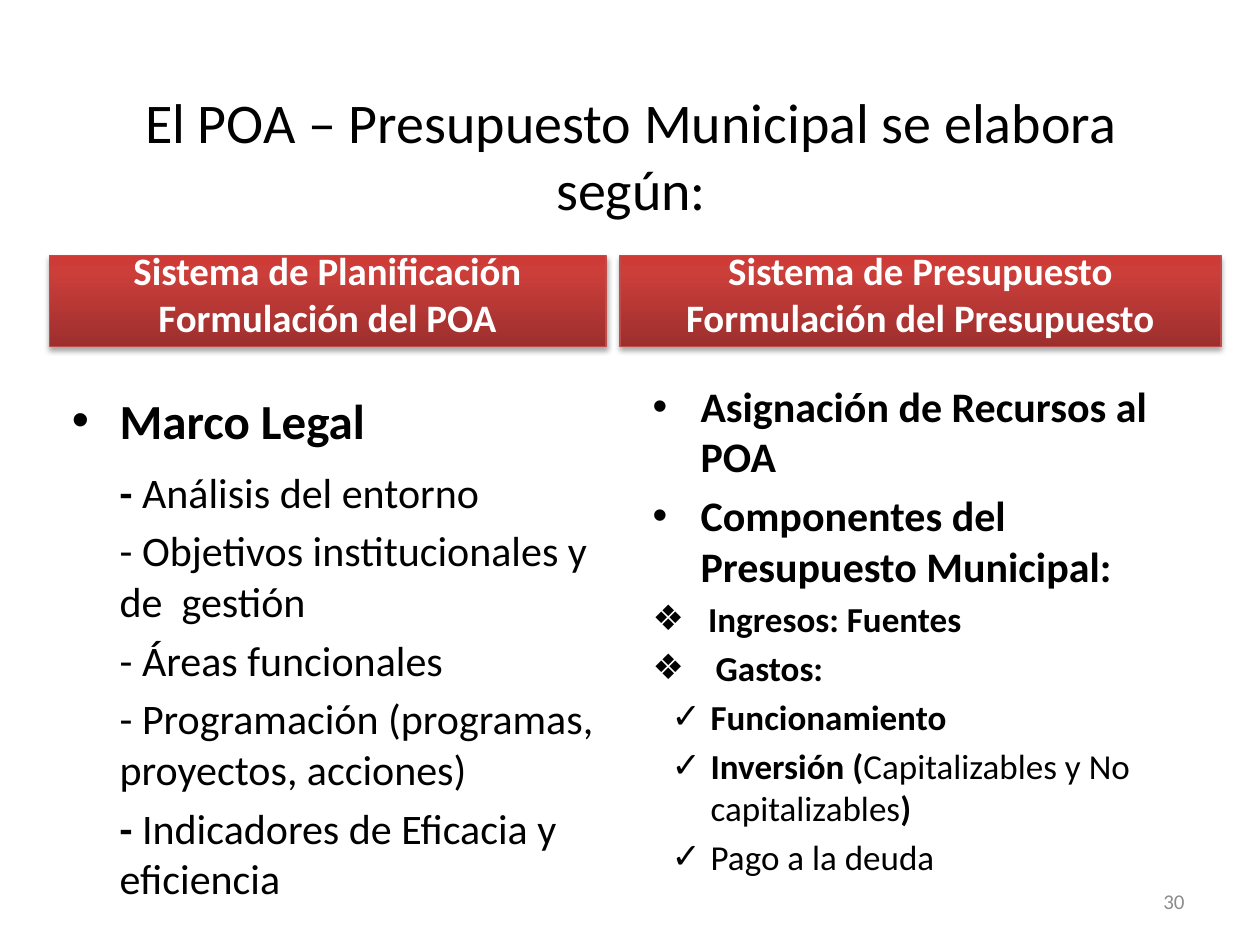
from lxml import etree
from pptx import Presentation
from pptx.dml.color import RGBColor
from pptx.enum.text import MSO_ANCHOR, MSO_AUTO_SIZE, PP_ALIGN
from pptx.oxml import parse_xml
from pptx.oxml.ns import nsdecls, qn
from pptx.util import Inches, Pt

CENTER, LEFT, RIGHT = PP_ALIGN.CENTER, PP_ALIGN.LEFT, PP_ALIGN.RIGHT
TOP, MIDDLE, BOTTOM = MSO_ANCHOR.TOP, MSO_ANCHOR.MIDDLE, MSO_ANCHOR.BOTTOM
NO_AUTOFIT = MSO_AUTO_SIZE.NONE
COMPARISON_LAYOUT = 4

COLORS = {
    "text": "000000",
    "header_text": "FFFFFF",
    "header_line": "BF4C48",
    "header_dark": "9C2F2D",
    "header_mid": "CB3E3A",
    "header_light": "CE3B37",
    "shadow": "000000",
    "number": "8C8C8C",
}

# Paragraph formats: size, space before, left margin and first-line indent
MAIN = {"size": 28, "margin": 0.38, "indent": -0.38, "bullet": "•"}
DASH = {"size": 24, "space": 4.8, "margin": 0.38, "indent": 0}
FIRST_DASH = {**DASH, "space": 9.5}
POINT = {"size": 24, "space": 4.8, "margin": 0.38, "indent": -0.38, "bullet": "•"}
INCOME = {"size": 20, "space": 4, "margin": 0.44, "indent": -0.44, "bullet": "❖"}
EXPENSES = {**INCOME, "margin": 0.5, "indent": -0.5}
CHECK = {"size": 20, "space": 4, "level": 1, "margin": 0.46, "indent": -0.31,
         "bullet": "✓"}

# Each item: format, then (text, bold) runs
PLANNING = [
    (MAIN, [("Marco Legal", True)]),
    (FIRST_DASH, [("- ", True), ("Análisis del entorno", False)]),
    (DASH, [("- Objetivos institucionales y de  gestión", False)]),
    (DASH, [("- Áreas funcionales", False)]),
    (DASH, [("- Programación (programas, proyectos, acciones)", False)]),
    (DASH, [("- ", True), ("Indicadores de Eficacia y eficiencia", False)]),
]
BUDGET = [
    (POINT, [("Asignación de Recursos al POA", True)]),
    (POINT, [("Componentes del Presupuesto Municipal:", True)]),
    (INCOME, [("Ingresos: Fuentes", True)]),
    (EXPENSES, [("Gastos:", True)]),
    (CHECK, [("Funcionamiento", True)]),
    (CHECK, [("Inversión (", True), ("Capitalizables y No capitalizables", False),
             (")", True)]),
    (CHECK, [("Pago a la deuda", False)]),
]


def place(shape, box, anchor):
    shape.left, shape.top, shape.width, shape.height = map(Inches, box)
    frame = shape.text_frame
    settings = {"word_wrap": True, "auto_size": NO_AUTOFIT, "vertical_anchor": anchor}
    for name, value in settings.items():
        setattr(frame, name, value)
    return frame


def add_run(paragraph, text, size, color, bold=False):
    run = paragraph.add_run()
    run.text = text
    settings = {"name": "Calibri", "size": Pt(size), "bold": bold}
    for name, value in settings.items():
        setattr(run.font, name, value)
    run.font.color.rgb = RGBColor.from_string(COLORS[color])


def write_line(shape, box, text, size, color, anchor, alignment, bold=False):
    paragraph = place(shape, box, anchor).paragraphs[0]
    paragraph.alignment = alignment
    paragraph.space_before = Pt(0)
    add_run(paragraph, text, size, color, bold)


def write_header(shape, box, text):
    write_line(shape, box, text, 22.2, "header_text", BOTTOM, CENTER, bold=True)
    shape.line.color.rgb = RGBColor.from_string(COLORS["header_line"])
    shape.line.width = Pt(0.75)
    stops = "".join(
        f'<a:gs pos="{position * 1000}"><a:srgbClr val="{COLORS[name]}"/></a:gs>'
        for position, name in ((0, "header_dark"), (80, "header_mid"),
                               (100, "header_light")))
    properties = shape.fill._xPr
    properties.find(qn("a:ln")).addprevious(parse_xml(
        f'<a:gradFill {nsdecls("a")} rotWithShape="1"><a:gsLst>{stops}</a:gsLst>'
        '<a:lin ang="16200000" scaled="0"/></a:gradFill>'))
    properties.append(parse_xml(
        f'<a:effectLst {nsdecls("a")}><a:outerShdw blurRad="{Pt(3.1)}" '
        f'dist="{Pt(1.8)}" dir="5400000" rotWithShape="0">'
        f'<a:srgbClr val="{COLORS["shadow"]}"><a:alpha val="35000"/></a:srgbClr>'
        '</a:outerShdw></a:effectLst>'))


def write_list(shape, box, items):
    frame = place(shape, box, TOP)
    for index, (style, runs) in enumerate(items):
        paragraph = frame.add_paragraph() if index else frame.paragraphs[0]
        paragraph.level = style.get("level", 0)
        paragraph.alignment = LEFT
        paragraph.space_before = Pt(style["space"] if index else 0)
        properties = paragraph._p.get_or_add_pPr()
        properties.set("marL", str(Inches(style["margin"])))
        properties.set("indent", str(Inches(style["indent"])))
        if "bullet" in style:
            etree.SubElement(properties, qn("a:buChar")).set("char", style["bullet"])
        else:
            etree.SubElement(properties, qn("a:buNone"))
        for text, bold in runs:
            add_run(paragraph, text, style["size"], "text", bold)


def main():
    presentation = Presentation()
    presentation.slide_width, presentation.slide_height = Inches(10), Inches(7.5)
    slide = presentation.slides.add_slide(presentation.slide_layouts[COMPARISON_LAYOUT])
    title, left_header, left_list, right_header, right_list = slide.placeholders

    write_line(title, (0.51, 0.6, 9, 1.25),
               "El POA – Presupuesto Municipal se elabora según:",
               32, "text", MIDDLE, CENTER)
    write_header(left_header, (0.39, 2.03, 4.42, 0.72),
                 "Sistema de Planificación Formulación del POA")
    write_header(right_header, (4.92, 2.03, 4.77, 0.72),
                 "Sistema de Presupuesto Formulación del Presupuesto")
    write_list(left_list, (0.47, 3.05, 4.42, 3.89), PLANNING)
    write_list(right_list, (5.08, 2.97, 4.42, 3.99), BUDGET)

    number_box = (7.17, 6.95, 2.33, 0.4)
    number = slide.shapes.add_textbox(*map(Inches, number_box))
    write_line(number, number_box, "30", 12, "number", MIDDLE, RIGHT)

    presentation.save("out.pptx")


if __name__ == "__main__":
    main()
